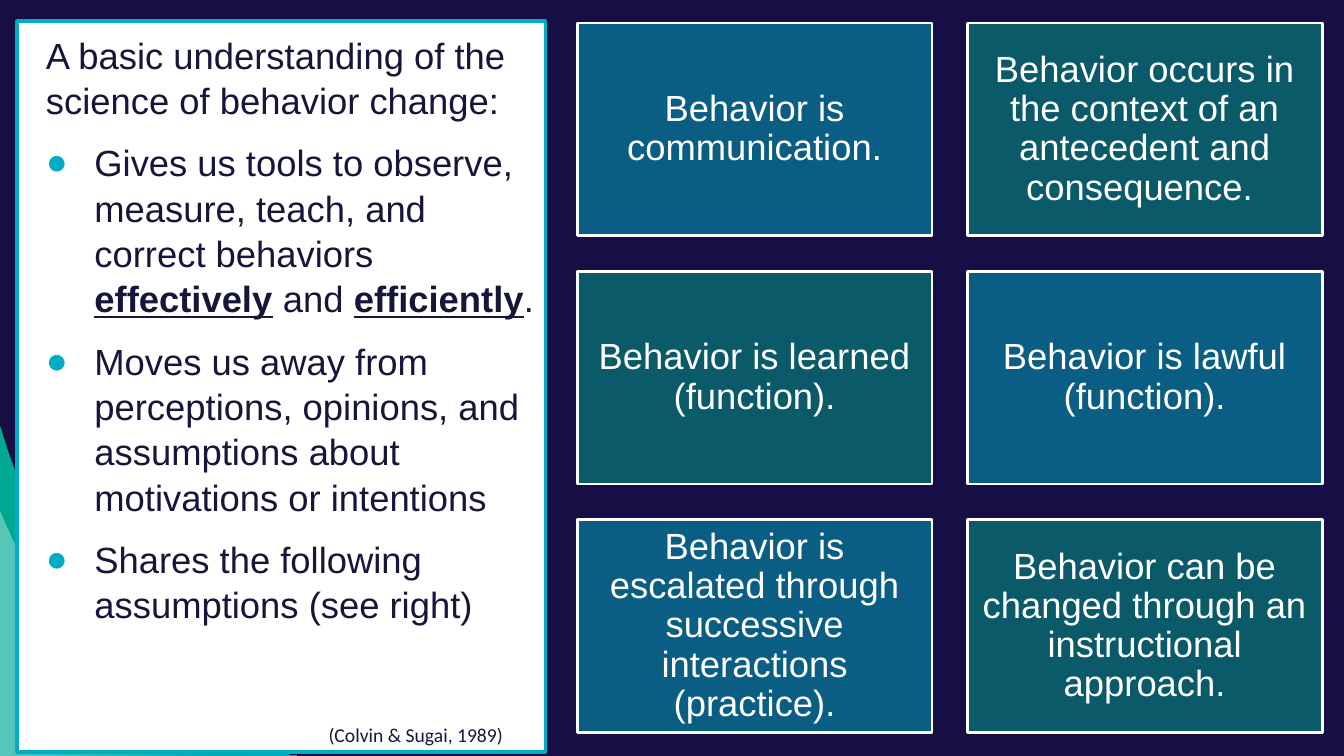
from lxml import etree
from pptx import Presentation
from pptx.dml.color import RGBColor
from pptx.enum import shapes, text
from pptx.oxml import ns
from pptx.util import Cm, Pt

WIDE, HIGH = 33.87, 19.05
NAVY, INK, WHITE, TEAL, GREEN = "160E44", "15163A", "FFFFFF", "00ACC2", "00A791"

# Curves as four Bezier points in cm; colours as (hex, opacity) from left to right
LEAVES = [
    ([(0, 10.49), (2.49, 18.77), (7.7, HIGH), (7.7, HIGH)], [("12102F", 54)]),
    ([(0, 10.72), (2.41, 18.77), (7.49, HIGH), (7.49, HIGH)],
     [(GREEN, 100), (TEAL, 100)]),
    ([(0, 12.85), (0, 12.85), (2.31, 18.67), (5.49, HIGH)],
     [(WHITE, 36), (WHITE, 0)]),
]
INTRO = "A basic understanding of the science of behavior change:"
# Each point is a list of runs; True marks a stressed run
POINTS = [
    [("Gives us tools to observe, measure, teach, and correct behaviors ", False),
     ("effectively", True), (" and ", False), ("efficiently", True), (".", False)],
    [("Moves us away from perceptions, opinions, and assumptions about "
      "motivations or intentions", False)],
    [("Shares the following assumptions (see right)", False)],
]
TILES = [
    ("Behavior is communication.", TEAL),
    ("Behavior occurs in the context of an antecedent and consequence. ", GREEN),
    ("Behavior is learned (function).", GREEN),
    ("Behavior is lawful (function).", TEAL),
    ("Behavior is escalated through successive interactions (practice).", TEAL),
    ("Behavior can be changed through an instructional approach.", GREEN),
]
CITE = "(Colvin & Sugai, 1989)"


def rgb(code):
    return RGBColor.from_string(code)


def add(parent, tag, **attrs):
    return etree.SubElement(parent, ns.qn(tag), attrs)


def fade(shape):
    """Yield the colour elements of a shape's fill, to take an alpha."""
    return [c for c in shape.element.spPr.iter(ns.qn("a:srgbClr"))]


def alpha(color, share):
    add(color, "a:alpha", val=str(share * 1000))


def style(run, size=26, color=INK, face="Arial", strong=False):
    font = run.font
    font.size, font.name = Pt(size), face
    font.color.rgb = rgb(color)
    font.bold = font.underline = strong


def box(frame, inset, anchor):
    frame.word_wrap = True
    frame.vertical_anchor = anchor
    frame.margin_left = frame.margin_right = Cm(inset)
    frame.margin_top = frame.margin_bottom = Cm(inset)


def rect(slide, left, top, width, height, fill, line, weight):
    shape = slide.shapes.add_shape(shapes.MSO_SHAPE.RECTANGLE,
                                   Cm(left), Cm(top), Cm(width), Cm(height))
    shape.shadow.inherit = False
    shape.fill.solid()
    shape.fill.fore_color.rgb = rgb(fill)
    shape.line.width = Pt(weight)
    return shape, line


def outline(pair):
    shape, line = pair
    shape.line.color.rgb = rgb(line)
    return shape


def curve(points, steps=32):
    """Sample a cubic Bezier curve."""
    for i in range(steps + 1):
        t = i / steps
        parts = ((1 - t) ** 3, 3 * t * (1 - t) ** 2, 3 * t * t * (1 - t), t ** 3)
        yield tuple(Cm(sum(w * p[k] for w, p in zip(parts, points)))
                    for k in (0, 1))


def leaf(slide, points, stops):
    dots = list(curve(points))
    form = slide.shapes.build_freeform(*dots[0])
    form.add_line_segments(dots[1:] + [(0, Cm(HIGH))], close=True)
    shape = form.convert_to_shape()
    shape.shadow.inherit = False
    shape.line.fill.background()
    fill = shape.fill
    if len(stops) == 1:
        fill.solid()
        fill.fore_color.rgb = rgb(stops[0][0])
    else:
        fill.gradient()
        fill.gradient_angle = 0
        for stop, (color, _) in zip(fill.gradient_stops, stops):
            stop.color.rgb = rgb(color)
    for color, (_, share) in zip(fade(shape), stops):
        alpha(color, share)


def indent(para, left, first=0):
    props = para._p.get_or_add_pPr()
    props.set("marL", str(Cm(left)))
    props.set("indent", str(Cm(first)))
    return props


def panel(slide):
    shape = outline(rect(slide, 0.43, 0.53, 13.31, 18.42, WHITE, TEAL, 2.25))
    frame = shape.text_frame
    box(frame, 0.25, text.MSO_ANCHOR.TOP)
    for i, runs in enumerate([[(INTRO, False)]] + POINTS):
        para = frame.add_paragraph() if i else frame.paragraphs[0]
        if i:
            props = indent(para, 1.7, -1.22)
            add(add(props, "a:buClr"), "a:srgbClr", val=TEAL)
            add(props, "a:buFont", typeface="Arial")
            add(props, "a:buChar", char="●")
        else:
            indent(para, 0.48)
        para.alignment = text.PP_ALIGN.LEFT
        para.line_spacing = 1.04
        para.space_after = Pt(12)
        for words, strong in runs:
            run = para.add_run()
            run.text = words
            style(run, strong=strong)


def tile(slide, i, words, color):
    row, col = divmod(i, 2)
    shape = outline(rect(slide, 14.55 + 9.83 * col, 0.58 + 6.26 * row,
                         8.94, 5.36, color, WHITE, 2))
    alpha(fade(shape)[0], 50)
    frame = shape.text_frame
    box(frame, 0.28, text.MSO_ANCHOR.MIDDLE)
    frame.text = words
    para = frame.paragraphs[0]
    para.alignment = text.PP_ALIGN.CENTER
    para.line_spacing = 0.9
    style(para.runs[0], color=WHITE)


def cite(slide):
    frame = slide.shapes.add_textbox(Cm(7.21), Cm(18.08),
                                     Cm(5.72), Cm(0.86)).text_frame
    frame.word_wrap = True
    frame.text = CITE
    para = frame.paragraphs[0]
    para.alignment = text.PP_ALIGN.RIGHT
    style(para.runs[0], 14, face="Calibri")


def main():
    deck = Presentation()
    deck.slide_width, deck.slide_height = Cm(WIDE), Cm(HIGH)
    slide = deck.slides.add_slide(deck.slide_layouts[6])
    back = slide.background.fill
    back.solid()
    back.fore_color.rgb = rgb(NAVY)
    for points, stops in LEAVES:
        leaf(slide, points, stops)
    panel(slide)
    for i, (words, color) in enumerate(TILES):
        tile(slide, i, words, color)
    cite(slide)
    deck.save("out.pptx")


if __name__ == "__main__":
    main()
